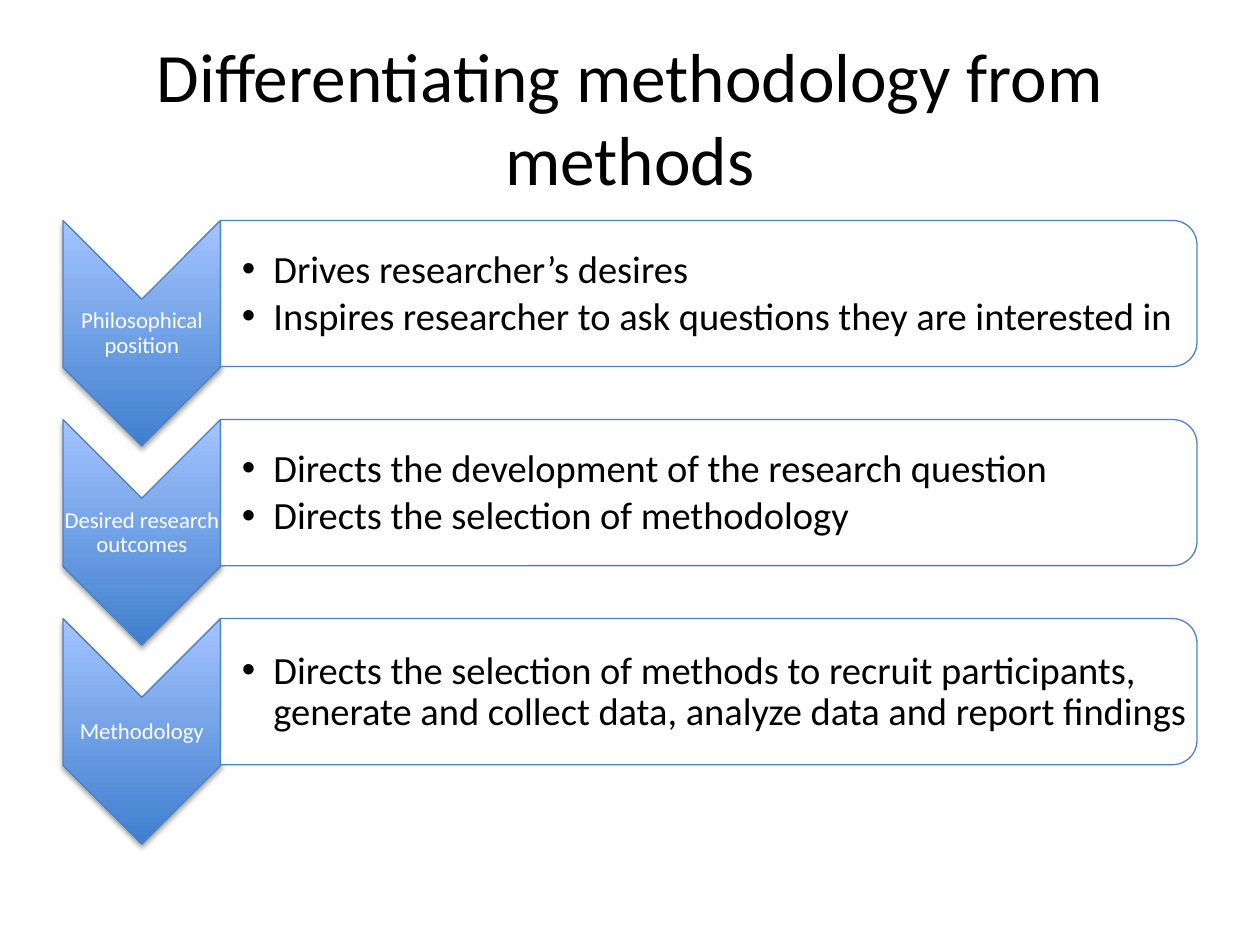
import pptx
import pptx.util
import pptx.dml.color
import pptx.enum.shapes
import pptx.enum.text
import pptx.oxml
from dataclasses import dataclass
from pptx.util import Inches

DRAWING = "http://schemas.openxmlformats.org/drawingml/2006/main"


@dataclass(frozen=True)
class Theme:
    font: str = "Calibri"
    text: str = "000000"
    label: str = "FFFFFF"
    panel: str = "FFFFFF"
    outline: str = "4F81BD"
    dark: str = "3F7FCE"
    light: str = "A4C4FF"
    title_size: float = 39.6
    label_size: float = 13
    bullet_size: float = 22


theme = Theme()
color = pptx.dml.color.RGBColor.from_string
shapes = pptx.enum.shapes.MSO_SHAPE
align = pptx.enum.text.PP_ALIGN
middle = pptx.enum.text.MSO_ANCHOR.MIDDLE


def add_turned_shape(kind, left, top, width, height):
    """Add a shape turned by 90 degrees that covers the given area."""
    shape = page.shapes.add_shape(
        kind,
        Inches(left + (width - height) / 2), Inches(top + (height - width) / 2),
        Inches(height), Inches(width))
    shape.rotation = 90
    shape.shadow.inherit = False
    shape.line.color.rgb = color(theme.outline)
    shape.line.width = pptx.util.Pt(0.75)
    return shape


def add_text(lines, area, insets, size, ink, after, bulleted=False):
    box = page.shapes.add_textbox(*[Inches(length) for length in area])
    frame = box.text_frame
    frame.word_wrap = True
    frame.vertical_anchor = middle
    frame.margin_left, frame.margin_right = Inches(insets[0]), Inches(insets[1])
    frame.margin_top = frame.margin_bottom = Inches(insets[1])
    frame.text = "\n".join(lines)
    for para in frame.paragraphs:
        para.alignment = align.LEFT if bulleted else align.CENTER
        para.line_spacing = 0.9
        para.space_after = pptx.util.Pt(size * after)
        if bulleted:
            properties = para._p.get_or_add_pPr()
            properties.set("marL", str(Inches(0.25)))
            properties.set("indent", str(Inches(-0.25)))
            properties.append(pptx.oxml.parse_xml(
                f'<a:buFont xmlns:a="{DRAWING}" typeface="Arial"/>'))
            properties.append(pptx.oxml.parse_xml(
                f'<a:buChar xmlns:a="{DRAWING}" char="•"/>'))
        para.font.name = theme.font
        para.font.size = pptx.util.Pt(size)
        para.font.color.rgb = color(ink)


deck = pptx.Presentation()
deck.slide_width, deck.slide_height = Inches(10), Inches(7.5)
page = deck.slides.add_slide(deck.slide_layouts.get_by_name("Title Only"))

# Title
title = page.shapes.title
title.left, title.top = Inches(0.5), Inches(0.3)
title.width, title.height = Inches(9), Inches(1.25)
title.text_frame.text = "Differentiating methodology from methods"
title.text_frame.auto_size = pptx.enum.text.MSO_AUTO_SIZE.NONE
title.text_frame.vertical_anchor = middle
heading = title.text_frame.paragraphs[0]
heading.alignment = align.CENTER
heading.font.name = theme.font
heading.font.size = pptx.util.Pt(theme.title_size)
heading.font.color.rgb = color(theme.text)

# Steps: a downward chevron with its label, and a panel with bullets
steps = [
    ("Philosophical position",
     ["Drives researcher’s desires",
      "Inspires researcher to ask questions they are interested in"]),
    ("Desired research outcomes",
     ["Directs the development of the research question",
      "Directs the selection of methodology"]),
    ("Methodology",
     ["Directs the selection of methods to recruit participants, "
      "generate and collect data, analyze data and report findings"]),
]
first_top, pitch = 1.75, 1.58
chevron_left, chevron_width, chevron_height = 0.5, 1.25, 1.79
panel_left, panel_width, panel_height = 1.75, 7.75, 1.16

for row, (label, bullets) in enumerate(steps):
    top = first_top + row * pitch

    # Chevron with an upright gradient and a soft shadow
    chevron = add_turned_shape(
        shapes.CHEVRON, chevron_left, top, chevron_width, chevron_height)
    chevron.fill.gradient()
    chevron.fill.gradient_angle = 90
    for stop, shade in zip(chevron.fill.gradient_stops, (theme.dark, theme.light)):
        stop.color.rgb = color(shade)
    properties = chevron._element.spPr
    properties.find(f"{{{DRAWING}}}gradFill").set("rotWithShape", "0")
    properties.find(f"{{{DRAWING}}}effectLst").append(pptx.oxml.parse_xml(
        f'<a:outerShdw xmlns:a="{DRAWING}" blurRad="40000" dist="23000" '
        'dir="5400000" rotWithShape="0"><a:srgbClr val="000000">'
        '<a:alpha val="35000"/></a:srgbClr></a:outerShdw>'))
    add_text([label], (chevron_left, top + 0.63, chevron_width, 0.54),
             (0.01, 0.01), theme.label_size, theme.label, 0.35)

    # Panel, rounded on the right
    panel = add_turned_shape(
        shapes.ROUND_2_SAME_RECTANGLE, panel_left, top, panel_width, panel_height)
    panel.fill.solid()
    panel.fill.fore_color.rgb = color(theme.panel)
    fill_color = panel._element.spPr.find(f"{{{DRAWING}}}solidFill")[0]
    fill_color.append(pptx.oxml.parse_xml(
        f'<a:alpha xmlns:a="{DRAWING}" val="90000"/>'))
    add_text(bullets, (panel_left, top + 0.06, 7.69, 1.05),
             (0.17, 0.02), theme.bullet_size, theme.text, 0.15, bulleted=True)

deck.save("out.pptx")
